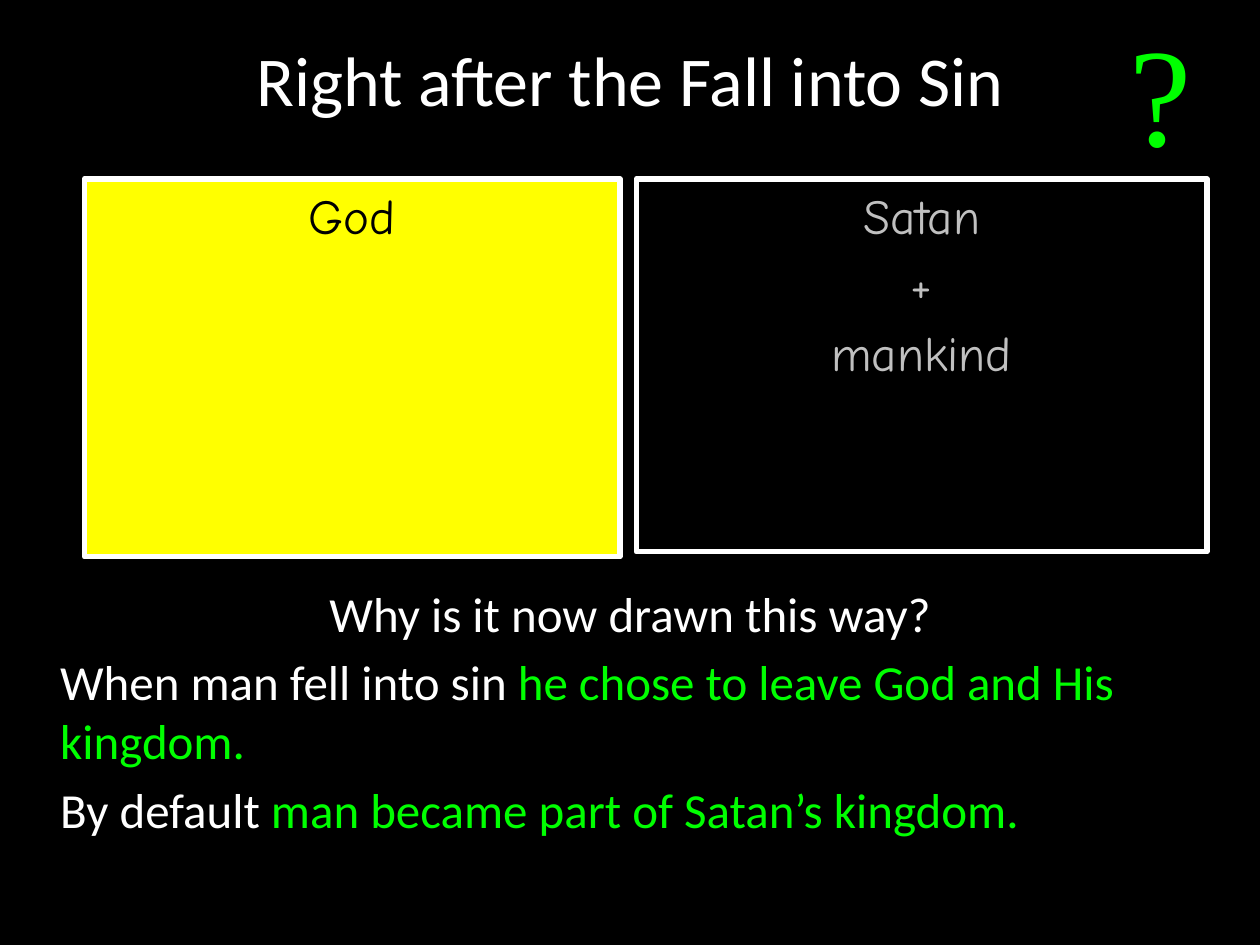
import pptx
import pptx.util
import pptx.dml.color
import pptx.enum.shapes
import pptx.enum.text

Inches, Pt = pptx.util.Inches, pptx.util.Pt
ALIGN, ANCHOR = pptx.enum.text.PP_ALIGN, pptx.enum.text.MSO_ANCHOR

THEME = {
    "black": "000000", "white": "FFFFFF", "green": "00FF00",
    "yellow": "FFFF00", "grey": "C0C0C0",
    "main": "Calibri", "hand": "Comic Neue", "serif": "Times New Roman",
    "title": 40, "text": 28, "mark": 80,
    "border": 3, "gap": 5.6, "indent": 0.38,
}

# Content: a paragraph is a list of (text, colour) runs
TITLE = [[("Right after the Fall into Sin", "white")]]
MARK = [[("?", "green")]]
QUESTION = [("Why is it now drawn this way?", "white")]
ANSWERS = [
    [("When man fell into sin", "white"),
     (" he chose to leave God and His kingdom.", "green")],
    [("By default ", "white"),
     ("man became part of Satan’s kingdom.", "green")],
]
KINGDOMS = [
    {"at": (0.67, 1.42, 4.25, 3), "fill": "yellow", "ink": "black",
     "members": ["God"]},
    {"at": (5.05, 1.42, 4.53, 2.96), "fill": "black", "ink": "grey",
     "members": ["Satan", "+", "mankind"]},
]


def colour(name):
    return pptx.dml.color.RGBColor.from_string(THEME[name])


def place(box, at):
    for side, length in zip(("left", "top", "width", "height"), at):
        setattr(box, side, Inches(length))


def write(box, paragraphs, font, size, anchor, gap=0):
    frame = box.text_frame
    frame.word_wrap = True
    frame.vertical_anchor = anchor
    for number, runs in enumerate(paragraphs):
        para = frame.add_paragraph() if number else frame.paragraphs[0]
        para.alignment = ALIGN.CENTER
        para.space_before = Pt(gap)
        for text, ink in runs:
            span = para.add_run()
            span.text = text
            formats = {"name": THEME[font], "size": Pt(THEME[size])}
            for key, value in formats.items():
                setattr(span.font, key, value)
            span.font.color.rgb = colour(ink)


deck = pptx.Presentation()
deck.slide_width, deck.slide_height = Inches(10), Inches(7.5)
page = deck.slides.add_slide(deck.slide_layouts[5])
page.background.fill.solid()
page.background.fill.fore_color.rgb = colour("black")

# Title
title = page.shapes.title
place(title, (0, 0, 10, 1.25))
write(title, TITLE, "main", "title", ANCHOR.MIDDLE)

# Question and left-aligned answers
body = page.shapes.add_textbox(0, Inches(4.58), Inches(10), Inches(2.92))
write(body, [QUESTION] + ANSWERS, "main", "text", ANCHOR.TOP, THEME["gap"])
for para in body.text_frame.paragraphs[1:]:
    para.alignment = ALIGN.LEFT
    para._p.get_or_add_pPr().set("marL", str(Inches(THEME["indent"])))

# The two kingdoms
for kingdom in KINGDOMS:
    box = page.shapes.add_shape(pptx.enum.shapes.MSO_SHAPE.RECTANGLE,
                                *map(Inches, kingdom["at"]))
    box.shadow.inherit = False
    box.fill.solid()
    box.fill.fore_color.rgb = colour(kingdom["fill"])
    box.line.color.rgb = colour("white")
    box.line.width = Pt(THEME["border"])
    members = [[(name, kingdom["ink"])] for name in kingdom["members"]]
    write(box, members, "hand", "text", ANCHOR.TOP, THEME["gap"])

# Question mark in the corner
mark = page.shapes.add_textbox(*map(Inches, (8.42, 0, 1.58, 1.43)))
write(mark, MARK, "serif", "mark", ANCHOR.MIDDLE)

deck.save("out.pptx")
